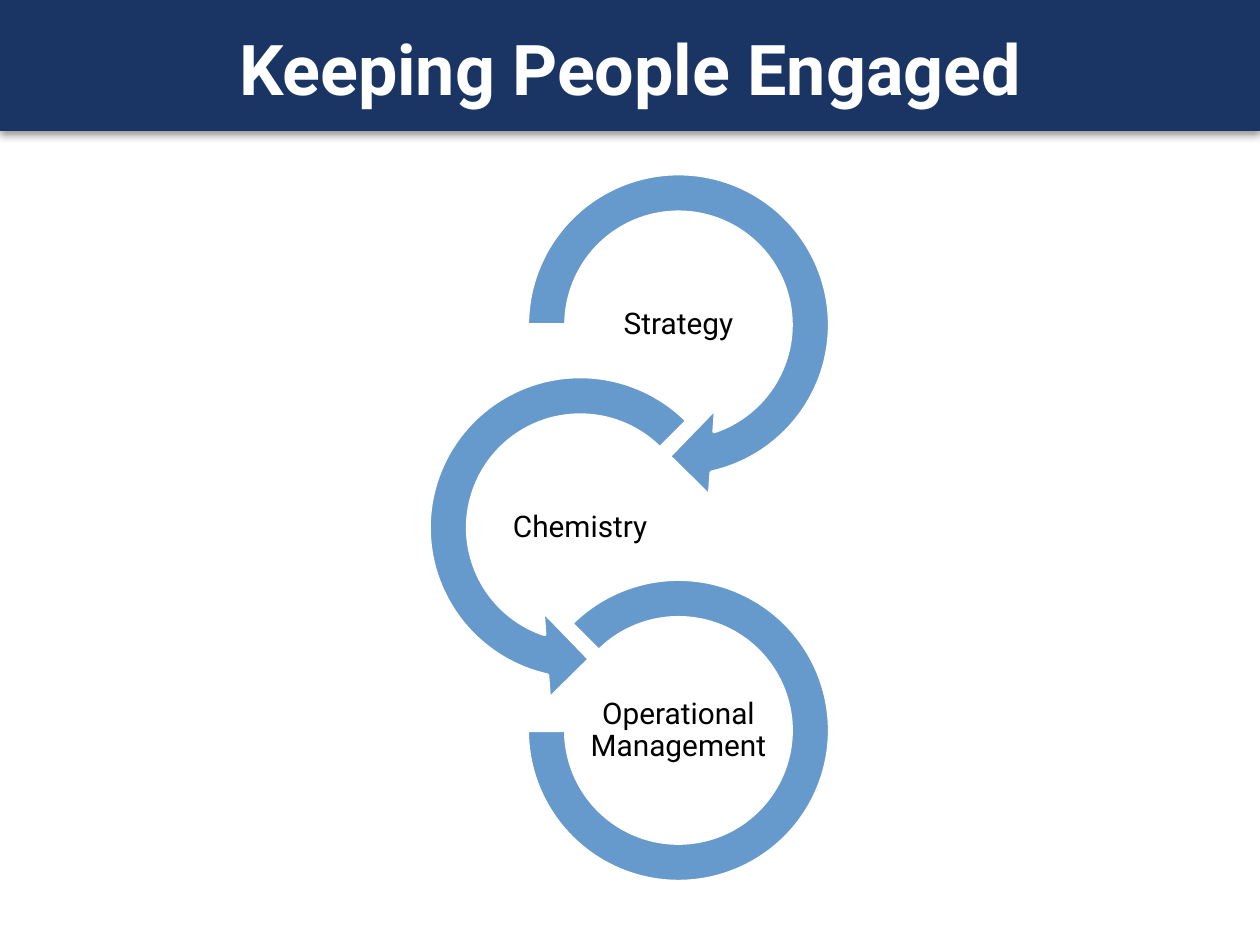
import pptx
import pptx.dml.color
import pptx.enum.shapes
import pptx.enum.text
import pptx.oxml
import pptx.oxml.ns
import pptx.util

Pt = pptx.util.Pt
SHAPES = pptx.enum.shapes.MSO_SHAPE
ANCHOR = pptx.enum.text.MSO_ANCHOR
NAVY = pptx.dml.color.RGBColor(0x1A, 0x35, 0x64)
BLUE = pptx.dml.color.RGBColor(0x66, 0x99, 0xCC)
WHITE = pptx.dml.color.RGBColor(0xFF, 0xFF, 0xFF)
BLACK = pptx.dml.color.RGBColor(0x00, 0x00, 0x00)

BAND_SHADOW = (
    f'<a:outerShdw {pptx.oxml.ns.nsdecls("a")} blurRad="{Pt(5)}" dist="{Pt(2)}" '
    'dir="5400000" rotWithShape="0"><a:srgbClr val="000000">'
    '<a:alpha val="40000"/></a:srgbClr></a:outerShdw>'
)
ARROW_SIZE, ARC_SIZE = 200.88, 172.8
LABEL_WIDTH, LABEL_HEIGHT = 111.6, 56.16
RIGHT_X, LEFT_X = 387.72, 331.56
FIRST_Y, STEP_Y = 185.6, 115.9
STEPS = [
    ("Strategy", RIGHT_X, SHAPES.CIRCULAR_ARROW, ARROW_SIZE,
     (0.1098, 11.42322, 45, 108, 0.125)),
    ("Chemistry", LEFT_X, SHAPES.LEFT_CIRCULAR_ARROW, ARROW_SIZE,
     (0.1098, 11.42322, 63, 189, 0.125)),
    ("Operational Management", RIGHT_X, SHAPES.BLOCK_ARC, ARC_SIZE,
     (135, 108, 0.1274)),
]


def set_values(target, values):
    """Set each named attribute of the target."""
    for name, value in values.items():
        setattr(target, name, value)


def add_filled(page, kind, bounds, color):
    """Add a preset shape with a plain fill and no shadow."""
    shape = page.shapes.add_shape(kind, *map(Pt, bounds))
    shape.shadow.inherit = False
    shape.fill.solid()
    shape.fill.fore_color.rgb = color
    return shape


def add_band(page):
    """Add the shadowed title band."""
    band = add_filled(page, SHAPES.RECTANGLE, (0, -2.2, 720, 77), NAVY)
    band.line.fill.background()
    effects = band._element.spPr.find(pptx.oxml.ns.qn("a:effectLst"))
    effects.append(pptx.oxml.parse_xml(BAND_SHADOW))


def add_text(page, text, bounds, frame_values, font_values, color, spacing=1.0):
    """Add a centred text box."""
    box = page.shapes.add_textbox(*map(Pt, bounds))
    set_values(box.text_frame, {"word_wrap": True, **frame_values})
    para = box.text_frame.paragraphs[0]
    set_values(para, {"alignment": pptx.enum.text.PP_ALIGN.CENTER,
                      "line_spacing": spacing})
    span = para.add_run()
    span.text = text
    set_values(span.font, {"name": "Roboto", **font_values})
    span.font.color.rgb = color


def add_ring(page, kind, center_x, center_y, size, adjustments):
    """Add a circular arrow or arc around a centre."""
    bounds = (center_x - size / 2, center_y - size / 2, size, size)
    ring = add_filled(page, kind, bounds, BLUE)
    ring.line.color.rgb = WHITE
    ring.line.width = Pt(2)
    for index, value in enumerate(adjustments):
        ring.adjustments[index] = value


def add_label(page, text, center_x, center_y):
    """Add a step name at the centre of its ring."""
    sides = ("left", "top", "right", "bottom")
    frame_values = {f"margin_{side}": Pt(0.8) for side in sides}
    frame_values["vertical_anchor"] = ANCHOR.MIDDLE
    bounds = (center_x - LABEL_WIDTH / 2, center_y - LABEL_HEIGHT / 2,
              LABEL_WIDTH, LABEL_HEIGHT)
    add_text(page, text, bounds, frame_values, {"size": Pt(17)}, BLACK, 0.9)


def main():
    """Build and save the slide."""
    deck = pptx.Presentation()
    set_values(deck, {"slide_width": Pt(720), "slide_height": Pt(540)})
    page = deck.slides.add_slide(deck.slide_layouts[6])
    add_band(page)
    add_text(page, "Keeping People Engaged", (43.2, 8.64, 633.6, 57.6),
             {"vertical_anchor": ANCHOR.BOTTOM},
             {"size": Pt(40), "bold": True}, WHITE)
    for index, (text, center_x, kind, size, adjustments) in enumerate(STEPS):
        center_y = FIRST_Y + index * STEP_Y
        add_ring(page, kind, center_x, center_y, size, adjustments)
        add_label(page, text, center_x, center_y)
    deck.save("out.pptx")


if __name__ == "__main__":
    main()
